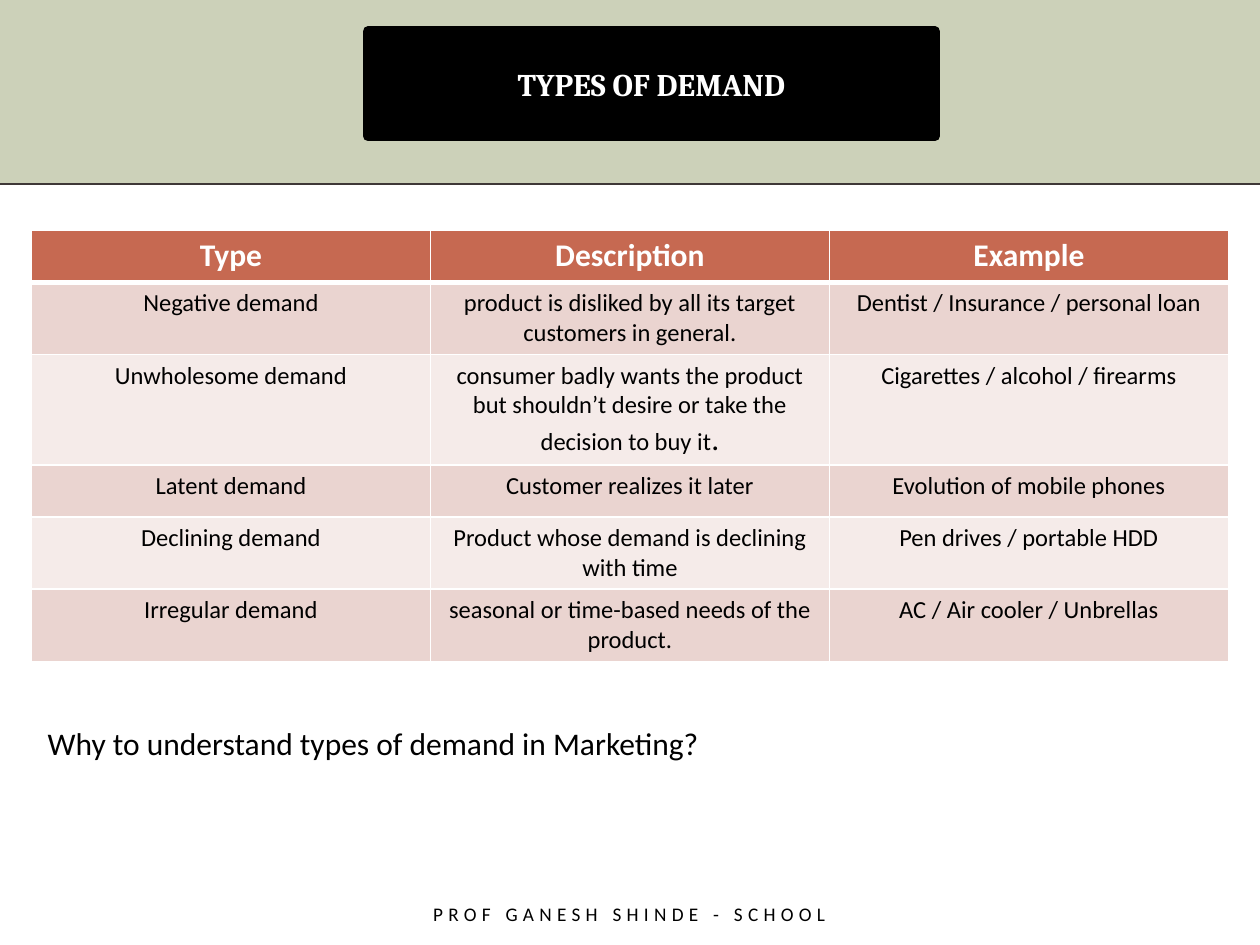
from lxml import etree
from pptx import Presentation
from pptx.dml.color import RGBColor
from pptx.enum import shapes, text
from pptx.oxml.ns import qn
from pptx.util import Inches, Pt

# Content
TITLE = "TYPES OF DEMAND"
QUESTION = "Why to understand types of demand in Marketing?"
FOOTER = "PROF GANESH SHINDE - SCHOOL"
HEADER = ("Type", "Description", "Example")
# A cell is a string, or a tuple of (text, size) runs
DEMANDS = [
    ("Negative demand",
     "product is disliked by all its target customers in general.",
     "Dentist / Insurance / personal loan"),
    ("Unwholesome demand",
     (("consumer badly wants the product but shouldn’t desire or take the "
       "decision to buy it", 14), (".", 18)),
     "Cigarettes / alcohol / firearms"),
    ("Latent demand", "Customer realizes it later", "Evolution of mobile phones"),
    ("Declining demand", "Product whose demand is declining with time",
     "Pen drives / portable HDD"),
    ("Irregular demand", "seasonal or time-based needs of the product.",
     "AC / Air cooler / Unbrellas"),
]

COLORS = {
    "band": "CCD1B9", "rule": "3E3737", "header": "C66951",
    "odd": "EAD4D0", "even": "F5EBE9", "black": "000000", "white": "FFFFFF",
}
BAND_BOTTOM = 1.46
ROW_HEIGHT = 0.41
CENTER = text.PP_ALIGN.CENTER


def rgb(name):
    return RGBColor.from_string(COLORS[name])


def write(tf, runs, color="black", align=None, **formats):
    """Fill the first paragraph with (text, size) runs and format them."""
    p = tf.paragraphs[0]
    p.alignment = align
    for words, size in runs:
        r = p.add_run()
        r.text = words
        r.font.color.rgb = rgb(color)
        for key, value in {"name": "Calibri", "size": Pt(size), **formats}.items():
            setattr(r.font, key, value)
    return p


def add_box(slide, box, fill, line=None, width=0):
    sp = slide.shapes.add_shape(shapes.MSO_SHAPE.RECTANGLE, *map(Inches, box))
    sp.shadow.inherit = False
    sp.fill.solid()
    sp.fill.fore_color.rgb = rgb(fill)
    if line:
        sp.line.color.rgb = rgb(line)
        sp.line.width = Pt(width)
    else:
        sp.line.fill.background()
    return sp


def add_text(slide, box, words, size, wrap=True, anchor=text.MSO_ANCHOR.TOP, align=None):
    tf = slide.shapes.add_textbox(*map(Inches, box)).text_frame
    tf.word_wrap = wrap
    tf.vertical_anchor = anchor
    return write(tf, [(words, size)], align=align)


def set_borders(cell, widths):
    tc_pr = cell._tc.get_or_add_tcPr()
    for i, (side, width) in enumerate(widths.items()):
        ln = etree.Element(qn(f"a:ln{side}"), w=str(Pt(width)))
        fill = etree.SubElement(ln, qn("a:solidFill"))
        etree.SubElement(fill, qn("a:srgbClr"), val=COLORS["white"])
        tc_pr.insert(i, ln)


def add_demand_table(slide):
    rows = [HEADER, *DEMANDS]
    frame = slide.shapes.add_table(
        len(rows), len(HEADER), *map(Inches, (0.25, 1.83, 9.5, 3.38)))
    for i, row in enumerate(rows):
        frame.table.rows[i].height = Inches(ROW_HEIGHT)
        is_header = i == 0
        fill = "header" if is_header else ("odd" if i % 2 else "even")
        for j, content in enumerate(row):
            cell = frame.table.cell(i, j)
            cell.fill.solid()
            cell.fill.fore_color.rgb = rgb(fill)
            set_borders(cell, {"L": 1, "R": 1, "T": 3 if i == 1 else 1,
                               "B": 3 if is_header else 1})
            size = 18 if is_header else 14
            runs = [(content, size)] if isinstance(content, str) else content
            write(cell.text_frame, runs, "white" if is_header else "black",
                  CENTER, bold=is_header)
    frame.height = Inches(3.38)


def main():
    prs = Presentation()
    prs.slide_width, prs.slide_height = Inches(10), Inches(7.5)
    slide = prs.slides.add_slide(prs.slide_layouts[6])

    # Green band above a white body, with a rule between them
    slide.background.fill.solid()
    slide.background.fill.fore_color.rgb = rgb("band")
    add_box(slide, (0, BAND_BOTTOM, 10, 7.5 - BAND_BOTTOM), "white")
    rule = slide.shapes.add_connector(
        shapes.MSO_CONNECTOR.STRAIGHT, *map(Inches, (0, BAND_BOTTOM, 10, BAND_BOTTOM)))
    rule.line.color.rgb = rgb("rule")
    rule.line.width = Pt(1)
    etree.SubElement(rule._element.spPr, qn("a:effectLst"))

    # Table of demand types
    add_demand_table(slide)

    # Title
    title = add_box(slide, (2.92, 0.25, 4.5, 0.83), "black", "black", 6)
    title.text_frame.vertical_anchor = text.MSO_ANCHOR.MIDDLE
    p = write(title.text_frame, [(TITLE, 18)], "white", CENTER, name="Cambria", bold=True)
    p.space_before = Pt(4)

    # Footer with wide letter spacing, and the closing question
    p = add_text(slide, (1.58, 7.09, 6.83, 0.32), FOOTER, 11,
                 anchor=text.MSO_ANCHOR.MIDDLE, align=CENTER)
    p.runs[0].font._element.set("spc", "300")
    add_text(slide, (0.28, 5.7, 5.63, 0.4), QUESTION, 18, wrap=False)

    prs.save("out.pptx")


if __name__ == "__main__":
    main()
